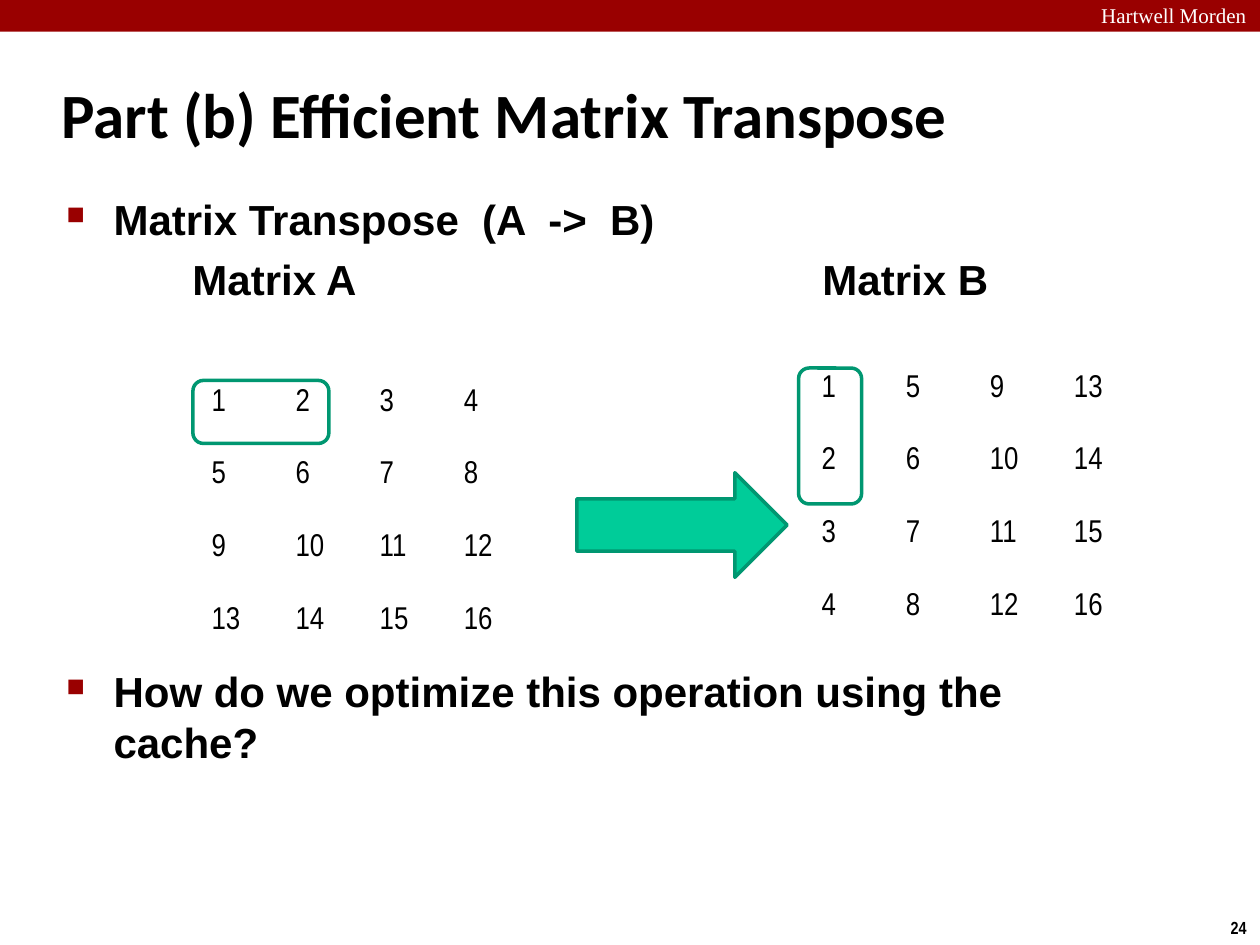
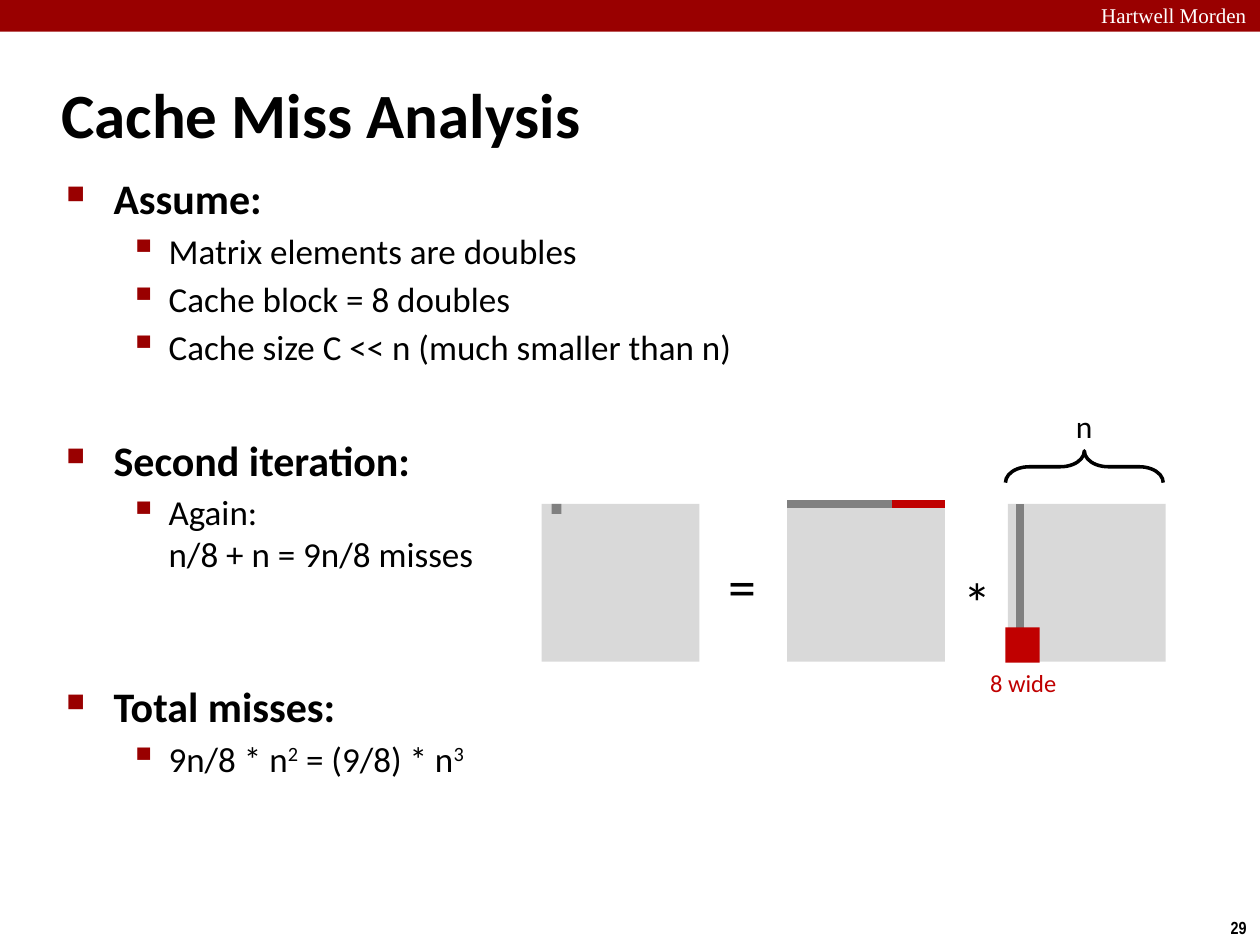
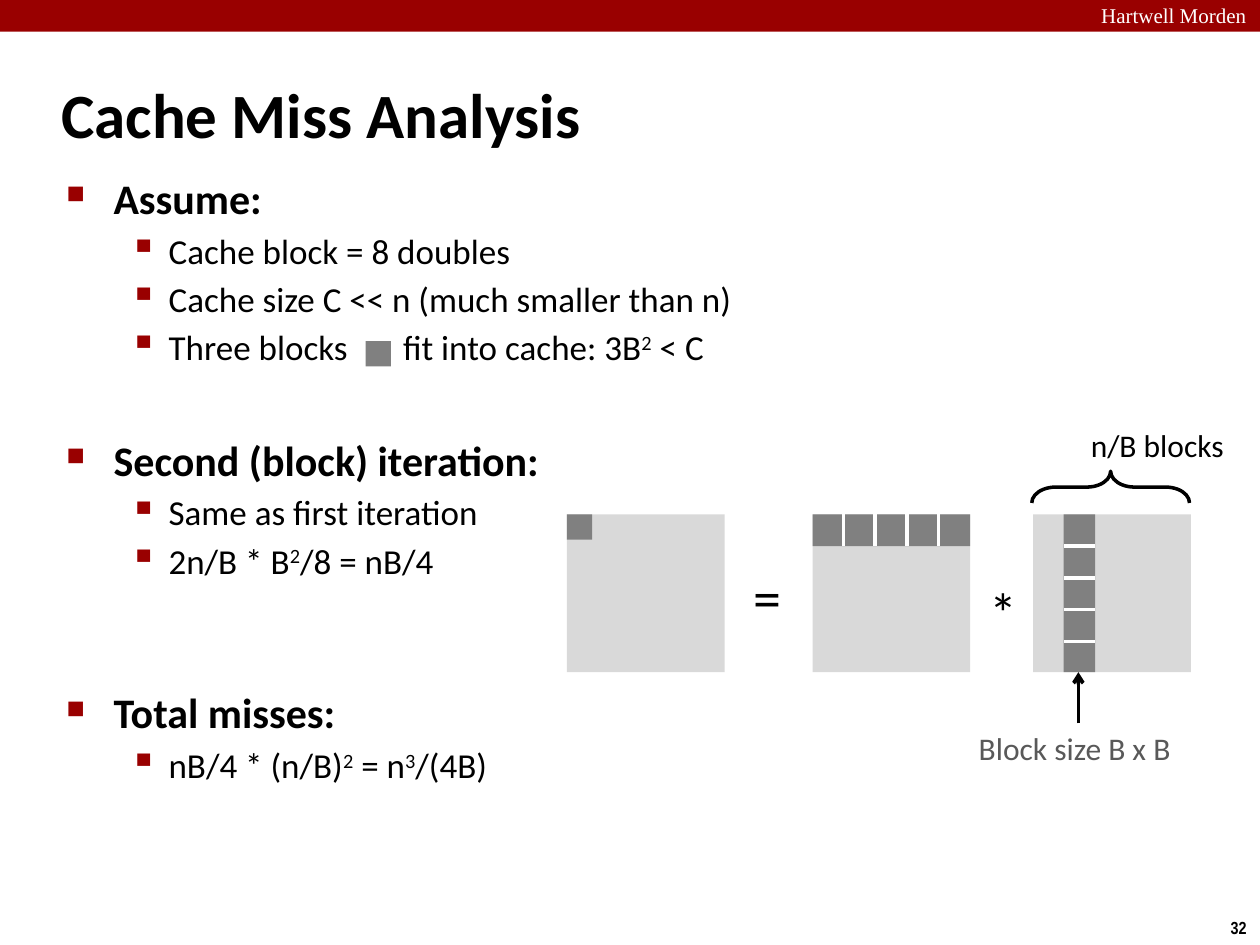
from lxml.etree import SubElement
from pptx import Presentation
from pptx.dml.color import RGBColor
from pptx.enum.shapes import MSO_CONNECTOR, MSO_SHAPE
from pptx.enum.text import MSO_ANCHOR
from pptx.oxml.ns import qn
from pptx.util import Cm, Pt

COLORS = {
    "band": "990000", "white": "FFFFFF", "black": "000000",
    "green": "00CC99", "edge": "009771", "pale": "D9D9D9",
    "gray": "808080", "red": "C00000", "dim": "595959",
}
SIDE = 3.18   # side of a matrix square
STEP = 0.64   # side of a block in the blocked matrix
# Per outline level: size, bold, left margin, hanging indent, bullet, bullet percent, space before
LEVELS = [
    (24, True, 0.95, -0.95, "■", 60, 4.4),
    (20, False, 2.06, -0.79, "▪", 110, 3.6),
]


def color(name):
    return RGBColor.from_string(COLORS[name])


class Deck:
    def __init__(self):
        self.prs = Presentation()
        self.prs.slide_width, self.prs.slide_height = Cm(25.4), Cm(19.05)
        self.slide = None

    def start(self, title, number):
        """Add a slide with its band, title and page number."""
        self.slide = self.prs.slides.add_slide(self.prs.slide_layouts[6])
        self.shape(MSO_SHAPE.RECTANGLE, 0, 0, 25.4, 0.64, "band")
        self.text("Hartwell Morden", 21.95, -0.08, 3.63, 0.76, 12, "white", "Times New Roman")
        self.text(number, 24.56, 18.36, 0.86, 0.69, 10, face="Arial Narrow", bold=True)
        frame = self.text(title, 0.99, 1.22, 21.08, 2.11, 36, bold=True)
        frame.word_wrap = True
        frame.vertical_anchor = MSO_ANCHOR.MIDDLE

    def font(self, para, size, tint="black", face="Calibri", bold=False):
        font = para.font
        font.size, font.name, font.bold = Pt(size), face, bold
        font.color.rgb = color(tint)

    def frame(self, x, y, w, h):
        return self.slide.shapes.add_textbox(Cm(x), Cm(y), Cm(w), Cm(h)).text_frame

    def text(self, words, x, y, w, h, size, tint="black", face="Calibri", bold=False):
        frame = self.frame(x, y, w, h)
        frame.word_wrap = False
        frame.text = words
        self.font(frame.paragraphs[0], size, tint, face, bold)
        return frame

    def shape(self, kind, x, y, w, h, fill=None, line=None):
        shape = self.slide.shapes.add_shape(kind, Cm(x), Cm(y), Cm(w), Cm(h))
        shape.shadow.inherit = False
        if fill:
            shape.fill.solid()
            shape.fill.fore_color.rgb = color(fill)
        else:
            shape.fill.background()
        if line:
            shape.line.color.rgb = color(line)
            shape.line.width = Pt(2)
        else:
            shape.line.fill.background()
        return shape

    def block(self, x, y, w, h, fill):
        self.shape(MSO_SHAPE.RECTANGLE, x, y, w, h, fill)

    def line(self, x1, y1, x2, y2, tint, width=2, arrow=False):
        line = self.slide.shapes.add_connector(
            MSO_CONNECTOR.STRAIGHT, Cm(x1), Cm(y1), Cm(x2), Cm(y2))
        line.line.color.rgb = color(tint)
        line.line.width = Pt(width)
        if arrow:
            SubElement(line.line._get_or_add_ln(), qn("a:tailEnd"), type="arrow")
        SubElement(line._element.spPr, qn("a:effectLst"))

    def brace(self, x, y):
        """Draw a brace that opens downward; x and y are those before its turn."""
        brace = self.shape(MSO_SHAPE.LEFT_BRACE, x, y, 0.64, SIDE, line="black")
        brace.rotation = 90
        brace.adjustments[0] = 0.75
        brace._element.spPr.xfrm.set("flipV", "1")

    def table(self, rows, x, y):
        count = len(rows)
        table = self.slide.shapes.add_table(
            count, count, Cm(x), Cm(y), Cm(1.695 * count), Cm(1.465 * count)).table
        table.first_row = table.horz_banding = False
        for r, row in enumerate(rows):
            for c, value in enumerate(row):
                cell = table.cell(r, c)
                cell.fill.background()
                cell.text = str(value)
                self.font(cell.text_frame.paragraphs[0], 18, face="Arial Narrow")

    def outline(self, items, y, h, face="Calibri"):
        """Fill the body with (level, text, space before or None) items."""
        frame = self.frame(1.09, y, 21.95, h)
        frame.word_wrap = True
        for i, (level, words, space) in enumerate(items):
            para = frame.add_paragraph() if i else frame.paragraphs[0]
            size, bold, left, hang, mark, scale, gap = LEVELS[level]
            props = para._p.get_or_add_pPr()
            if words.startswith("\t"):
                tabs = SubElement(props, qn("a:tabLst"))
                for stop in (2.54, 15.24):
                    SubElement(tabs, qn("a:tab"), pos=str(Cm(stop)), algn="l")
            else:
                props.set("marL", str(Cm(left)))
                props.set("indent", str(Cm(hang)))
                tint = SubElement(props, qn("a:buClr"))
                SubElement(tint, qn("a:srgbClr"), val=COLORS["band"])
                SubElement(props, qn("a:buSzPct"), val=str(scale * 1000))
                SubElement(props, qn("a:buChar"), char=mark)
            para.space_before = Pt(gap if space is None else space)
            self.font(para, size, face=face, bold=bold)
            self.runs(para, words)

    def runs(self, para, words):
        """Between carets stand a raised text, a wide space or a line break."""
        for i, part in enumerate(words.split("^")):
            if part == "\v":
                para.add_line_break()
                continue
            run = para.add_run()
            run.text = part
            if i % 2:
                props = run._r.get_or_add_rPr()
                if part == " ":
                    props.set("spc", "2700")
                else:
                    props.set("baseline", "30000")

    def product(self, x, y):
        """Draw three matrices as C = A * B and return their left edges."""
        edges = [x, x + 4.95, x + 9.4]
        for edge in edges:
            self.block(edge, y, SIDE, SIDE, "pale")
        self.text("=", x + 3.51, y + 0.84, 1.09, 1.63, 32)
        self.text("*", x + 8.26, y + 1.15, 1.09, 1.63, 32)
        return edges


def transpose(deck):
    deck.start("Part (b) Efficient Matrix Transpose", "24")
    rows = [range(n, n + 4) for n in range(1, 17, 4)]
    deck.table(list(zip(*rows)), 16.31, 7.42)
    deck.table(rows, 4.01, 7.7)
    deck.outline([
        (0, "Matrix Transpose  (A  ->  B)", None),
        (0, "\tMatrix A\tMatrix B", 5.2),
        (0, "How do we optimize this operation using the cache?", 207),
    ], 3.78, 13.82, "Arial")
    # Matching cells and the step between the matrices
    deck.shape(MSO_SHAPE.ROUNDED_RECTANGLE, 16.1, 7.42, 1.27, 2.74, line="edge")
    deck.shape(MSO_SHAPE.RIGHT_ARROW, 11.63, 9.53, 4.24, 2.11, "green", "edge")
    deck.shape(MSO_SHAPE.ROUNDED_RECTANGLE, 3.89, 7.67, 2.74, 1.27, line="edge")


def plain(deck):
    deck.start("Cache Miss Analysis", "29")
    deck.outline([
        (0, "Assume:", None),
        (1, "Matrix elements are doubles", None),
        (1, "Cache block = 8 doubles", None),
        (1, "Cache size C << n (much smaller than n)", None),
        (0, "Second iteration:", 38),
        (1, "Again:^\v^n/8 + n = 9n/8 misses", None),
        (0, "Total misses:", 60.4),
        (1, "9n/8 * n^2^ = (9/8) * n^3", None),
    ], 3.35, 14.83)
    # Row times column
    y = 10.16
    out, left, right = deck.product(10.92, y)
    deck.brace(21.54, 7.82)
    deck.text("n", 21.44, 8.08, 0.86, 1.02, 18)
    deck.block(out + 0.2, y, 0.2, 0.2, "gray")
    deck.line(left, y, left + SIDE, y, "gray", 4.5)
    deck.line(left + 2.11, y, left + SIDE, y, "red", 4.5)
    deck.line(right + 0.25, y, right + 0.25, y + SIDE, "gray", 4.5)
    deck.block(right - 0.05, y + 2.49, 0.69, 0.71, "red")
    deck.text("8 wide", 19.71, 13.34, 1.88, 0.86, 14, "red")


def blocked(deck):
    deck.start("Cache Miss Analysis", "32")
    deck.outline([
        (0, "Assume:", None),
        (1, "Cache block = 8 doubles", None),
        (1, "Cache size C << n (much smaller than n)", None),
        (1, "Three blocks^ ^fit into cache: 3B^2^ < C", None),
        (0, "Second (block) iteration:", 38),
        (1, "Same as first iteration", None),
        (1, "2n/B * B^2^/8 = nB/4", None),
        (0, "Total misses:", 60.4),
        (1, "nB/4 * (n/B)^2^ = n^3^/(4B)", None),
    ], 3.35, 14.83)
    deck.block(7.37, 6.88, 0.51, 0.51, "gray")
    # Block row times block column
    y = 10.37
    out, left, right = deck.product(11.43, y)
    col = right + 0.61
    deck.block(out, y, 0.51, 0.51, "gray")
    deck.block(left, y, SIDE, STEP, "gray")
    deck.block(col, y, STEP, SIDE, "gray")
    for i in range(1, 5):
        cut = i * STEP
        deck.line(left + cut - 0.02, y, left + cut - 0.02, y + STEP, "white")
        deck.line(col + STEP, y + cut, col, y + cut, "white")
    # Labels
    deck.brace(22.07, 8.23)
    deck.text("n/B blocks", 21.74, 8.46, 3.3, 1.02, 18)
    deck.text("Block size B x B", 19.48, 14.58, 4.52, 1.02, 18, "dim")
    deck.line(21.74, 14.58, 21.74, y + SIDE, "black", arrow=True)


def main():
    deck = Deck()
    for build in (transpose, plain, blocked):
        build(deck)
    deck.prs.save("out.pptx")


if __name__ == "__main__":
    main()
